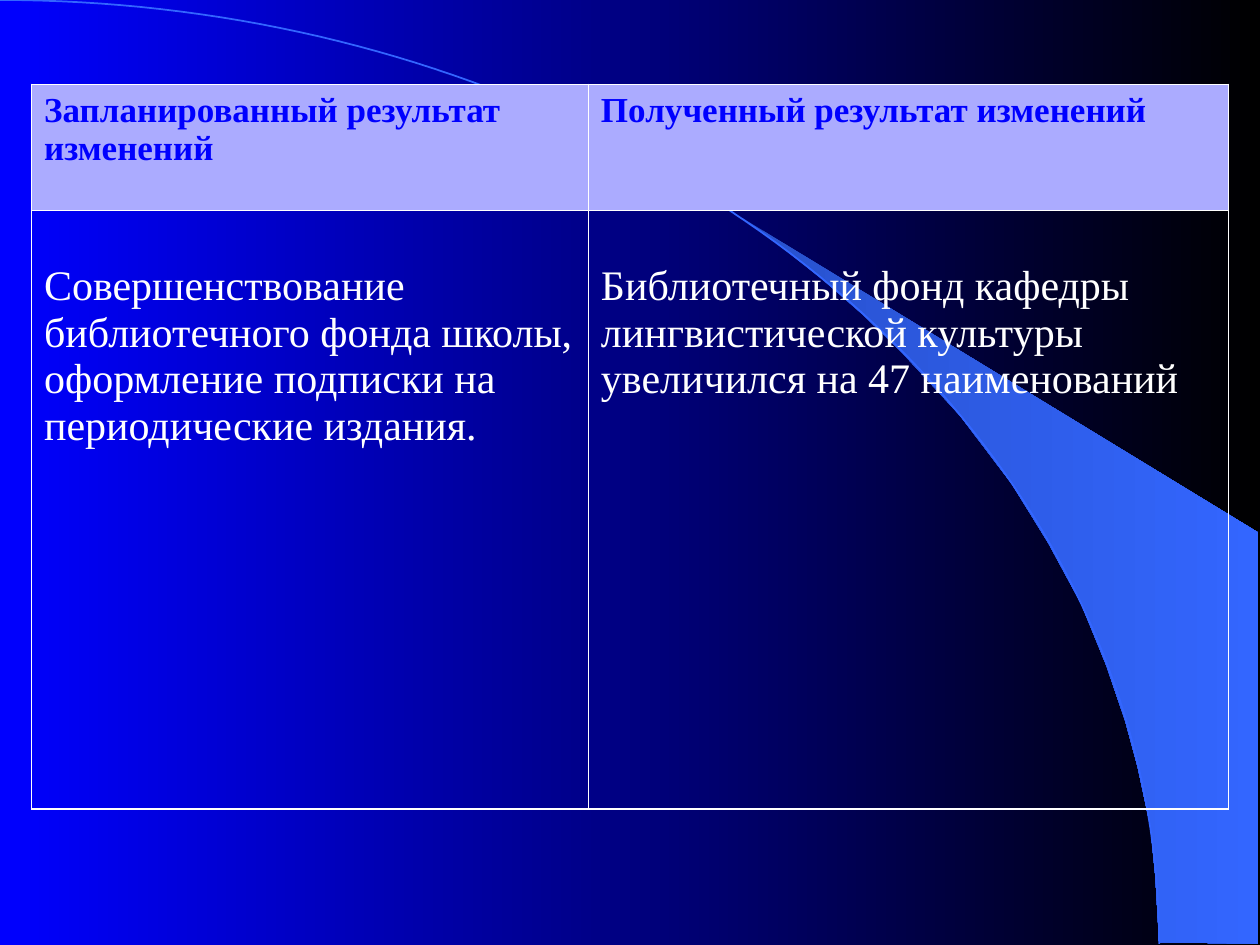
from math import cos, pi, sin

from lxml import etree
from pptx import Presentation
from pptx.dml.color import RGBColor
from pptx.oxml.ns import qn
from pptx.util import Inches, Pt

BLUE = RGBColor(0x00, 0x00, 0xFF)
BLACK = RGBColor(0x00, 0x00, 0x00)
WHITE = RGBColor(0xFF, 0xFF, 0xFF)
LAVENDER = RGBColor(0xAB, 0xAB, 0xFF)
SWEEP_DARK = RGBColor(0x28, 0x51, 0xCC)
SWEEP_LIGHT = RGBColor(0x33, 0x66, 0xFF)

HEADER_FORMAT = {"name": "Times New Roman", "size": Pt(20), "bold": True}
BODY_FORMAT = {"name": "Times New Roman", "size": Pt(24), "bold": False}

HEADERS = ["Запланированный результат изменений", "Полученный результат изменений"]
RESULTS = [
    "Совершенствование библиотечного фонда школы, оформление подписки на периодические издания.",
    "Библиотечный фонд кафедры лингвистической культуры увеличился на 47 наименований",
]
SWEEP_POINTS = [
    (3.31, 5.75), (4.1, 5.76), (4.1, 2.5), (0, 0), (0.35, 0.26), (0.64, 0.49),
    (0.96, 0.77), (1.27, 1.07), (1.73, 1.57), (2.14, 2.11), (2.43, 2.58),
    (2.69, 3.06), (2.89, 3.55), (3.04, 3.99), (3.14, 4.36), (3.24, 4.83),
    (3.28, 5.23),
]


def apply_gradient(fill, colors):
    fill.gradient()
    fill.gradient_angle = 0
    for stop, color in zip(fill.gradient_stops, colors):
        stop.color.rgb = color


def add_outline(slide, points, close):
    corners = [(Inches(x), Inches(y)) for x, y in points]
    builder = slide.shapes.build_freeform(*corners[0])
    builder.add_line_segments(corners[1:], close=close)
    shape = builder.convert_to_shape()
    shape.shadow.inherit = False
    return shape


def add_sweep(slide, left, top):
    shape = add_outline(slide, [(left + x, top + y) for x, y in SWEEP_POINTS], True)
    apply_gradient(shape.fill, [SWEEP_DARK, SWEEP_LIGHT])
    shape.line.fill.background()


def add_arc(slide, left, top, width, height, steps=90):
    angles = [pi / 2 * step / steps for step in range(steps + 1)]
    points = [
        (left + width * sin(angle), top + height * (1 - cos(angle)))
        for angle in angles
    ]
    shape = add_outline(slide, points, False)
    shape.fill.background()
    shape.line.color.rgb = SWEEP_LIGHT
    shape.line.width = Pt(1)


def add_borders(cell, color, width):
    properties = cell._tc.get_or_add_tcPr()
    for side in ("a:lnL", "a:lnR", "a:lnT", "a:lnB"):
        line = etree.SubElement(properties, qn(side), w=str(width))
        fill = etree.SubElement(line, qn("a:solidFill"))
        etree.SubElement(fill, qn("a:srgbClr"), val=str(color))


def write_cell(cell, text, color, formats):
    cell.text = text
    font = cell.text_frame.paragraphs[0].runs[0].font
    font.color.rgb = color
    for attribute, value in formats.items():
        setattr(font, attribute, value)
    add_borders(cell, WHITE, Pt(1))


def add_results_table(slide, left, top, width, height):
    frame = slide.shapes.add_table(
        2, 2, Inches(left), Inches(top), Inches(width), Inches(height)
    )
    table = frame.table
    table.horz_banding = False
    first_width, header_height = 4.42, 1
    for column, size in zip(table.columns, (first_width, width - first_width)):
        column.width = Inches(size)
    for row, size in zip(table.rows, (header_height, height - header_height)):
        row.height = Inches(size)
    for index, (header, result) in enumerate(zip(HEADERS, RESULTS)):
        header_cell, result_cell = table.cell(0, index), table.cell(1, index)
        write_cell(header_cell, header, BLUE, HEADER_FORMAT)
        header_cell.fill.solid()
        header_cell.fill.fore_color.rgb = LAVENDER
        write_cell(result_cell, result, WHITE, BODY_FORMAT)
        result_cell.fill.background()
        result_cell.margin_top = Inches(0.42)


def main():
    presentation = Presentation()
    presentation.slide_width = Inches(10)
    presentation.slide_height = Inches(7.5)
    slide = presentation.slides.add_slide(presentation.slide_layouts[6])
    apply_gradient(slide.background.fill, [BLUE, BLACK])
    add_sweep(slide, 5.89, 1.73)
    add_arc(slide, 0, 0, 9.2, 7.49)
    add_results_table(slide, 0.25, 0.67, 9.5, 5.75)
    presentation.save("out.pptx")


if __name__ == "__main__":
    main()
